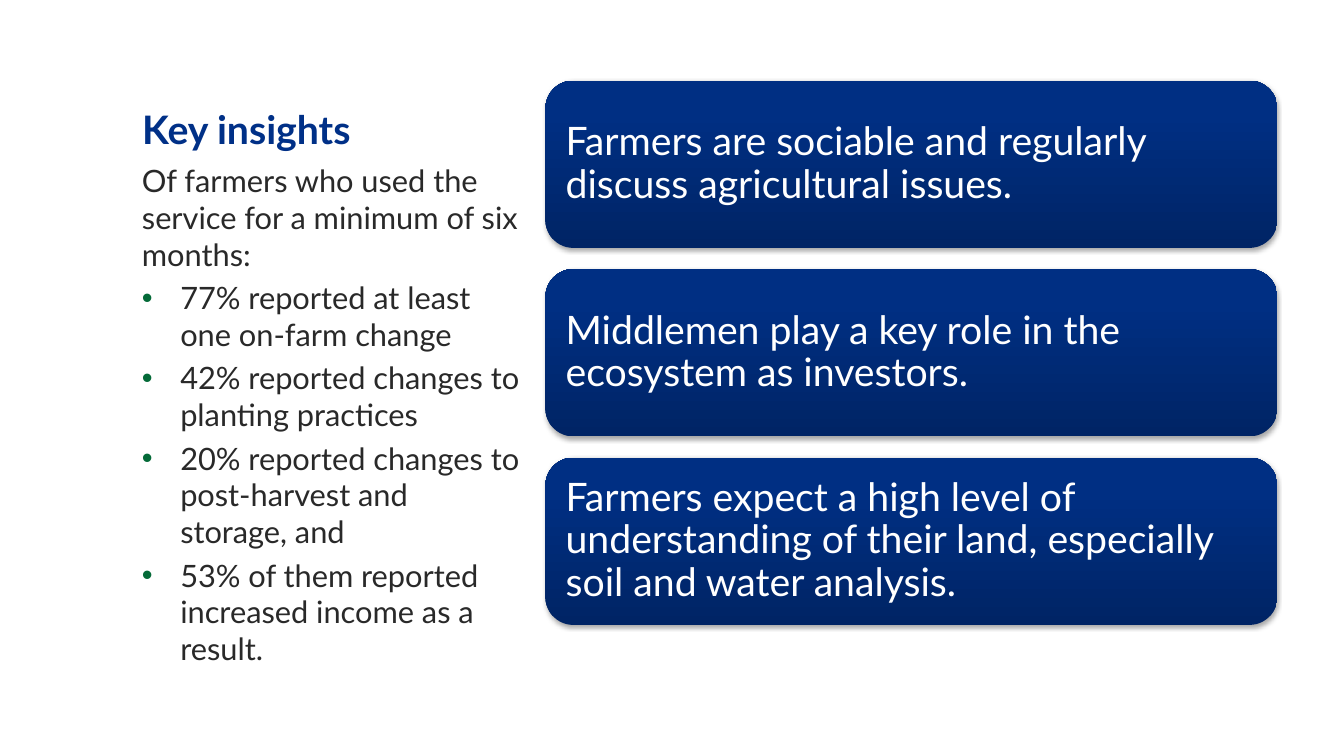
import pptx
import pptx.util
import pptx.dml.color
import pptx.enum.shapes
import pptx.enum.text
import pptx.oxml
import pptx.oxml.ns

Inches = pptx.util.Inches
Pt = pptx.util.Pt
Anchor = pptx.enum.text.MSO_ANCHOR

COLORS = {
    "heading": "003087", "body": "292929", "bullet": "046A38",
    "card_text": "FFFFFF", "card_bottom": "002465", "card_top": "002F83",
}
COLUMN_LEFT, COLUMN_WIDTH = 1.31, 3.97
HEADING_TOP, HEADING_HEIGHT, BODY_HEIGHT = 0.29, 1.27, 5.13
CARD_LEFT, CARD_TOP, CARD_WIDTH, CARD_HEIGHT, CARD_PITCH = 5.41, 0.8, 7.26, 1.66, 1.87

INTRO = "Of farmers who used the service for a minimum of six months:"
FINDINGS = [
    "77% reported at least one on-farm change",
    "42% reported changes to planting practices",
    "20% reported changes to post-harvest and storage, and",
    "53% of them reported increased income as a result.",
]
INSIGHTS = [
    "Farmers are sociable and regularly discuss agricultural issues.",
    "Middlemen play a key role in the ecosystem as investors.",
    "Farmers expect a high level of understanding of their land, especially soil and water analysis.",
]


def write(para, text, size, color, bold=False):
    """Add a left-aligned span in the slide's font."""
    para.alignment = pptx.enum.text.PP_ALIGN.LEFT
    span = para.add_run()
    span.text = text
    for name, value in {"name": "Lato", "size": Pt(size), "bold": bold}.items():
        setattr(span.font, name, value)
    span.font.color.rgb = pptx.dml.color.RGBColor.from_string(COLORS[color])


def prepare_frame(box, anchor, side, edge):
    """Set wrapping, anchor and margins in inches; return the text frame."""
    frame = box.text_frame
    settings = {
        "word_wrap": True, "auto_size": pptx.enum.text.MSO_AUTO_SIZE.NONE,
        "vertical_anchor": anchor,
        "margin_left": Inches(side), "margin_right": Inches(side),
        "margin_top": Inches(edge), "margin_bottom": Inches(edge),
    }
    for name, value in settings.items():
        setattr(frame, name, value)
    return frame


deck = pptx.Presentation()
deck.slide_width, deck.slide_height = Inches(13.33), Inches(7.5)
page = deck.slides.add_slide(deck.slide_layouts[5])
namespace = pptx.oxml.ns.nsdecls("a")

# Heading
heading = page.shapes.title
heading.left, heading.top = Inches(COLUMN_LEFT), Inches(HEADING_TOP)
heading.width, heading.height = Inches(COLUMN_WIDTH), Inches(HEADING_HEIGHT)
frame = prepare_frame(heading, Anchor.BOTTOM, 0.1, 0.05)
write(frame.paragraphs[0], "Key insights", 28, "heading", bold=True)

# Insight cards
for row, insight in enumerate(INSIGHTS):
    card = page.shapes.add_shape(
        pptx.enum.shapes.MSO_SHAPE.ROUNDED_RECTANGLE,
        Inches(CARD_LEFT), Inches(CARD_TOP + row * CARD_PITCH),
        Inches(CARD_WIDTH), Inches(CARD_HEIGHT))
    card.line.fill.background()
    card.fill.gradient()
    card.fill.gradient_angle = 90
    stops = [(0, "card_bottom"), (0.8, "card_top")]
    for stop, (position, color) in zip(card.fill.gradient_stops, stops):
        stop.position = position
        stop.color.rgb = pptx.dml.color.RGBColor.from_string(COLORS[color])
    card.shadow.inherit = False
    effects = card.element.spPr.find(pptx.oxml.ns.qn("a:effectLst"))
    effects.append(pptx.oxml.parse_xml(
        f'<a:outerShdw {namespace} blurRad="{Pt(3.1)}" dist="{Pt(1.8)}" dir="5400000" '
        'rotWithShape="0"><a:srgbClr val="000000"><a:alpha val="35000"/></a:srgbClr>'
        '</a:outerShdw>'))
    para = prepare_frame(card, Anchor.MIDDLE, 0.12, 0.12).paragraphs[0]
    para.line_spacing = 0.9
    write(para, insight, 28, "card_text")

# Findings
findings = page.shapes.add_textbox(
    Inches(COLUMN_LEFT), Inches(HEADING_TOP + HEADING_HEIGHT),
    Inches(COLUMN_WIDTH), Inches(BODY_HEIGHT))
frame = prepare_frame(findings, Anchor.TOP, 0.1, 0.05)
write(frame.paragraphs[0], INTRO, 22, "body")
for finding in FINDINGS:
    para = frame.add_paragraph()
    properties = para._p.get_or_add_pPr()
    properties.set("marL", str(Inches(0.38)))
    properties.set("indent", str(-Inches(0.38)))
    for bullet in (f'<a:buClr {namespace}><a:srgbClr val="{COLORS["bullet"]}"/></a:buClr>',
                   f'<a:buFont {namespace} typeface="Arial"/>',
                   f'<a:buChar {namespace} char="•"/>'):
        properties.append(pptx.oxml.parse_xml(bullet))
    para.space_before = Pt(4.4)
    write(para, finding, 22, "body")

deck.save("out.pptx")
